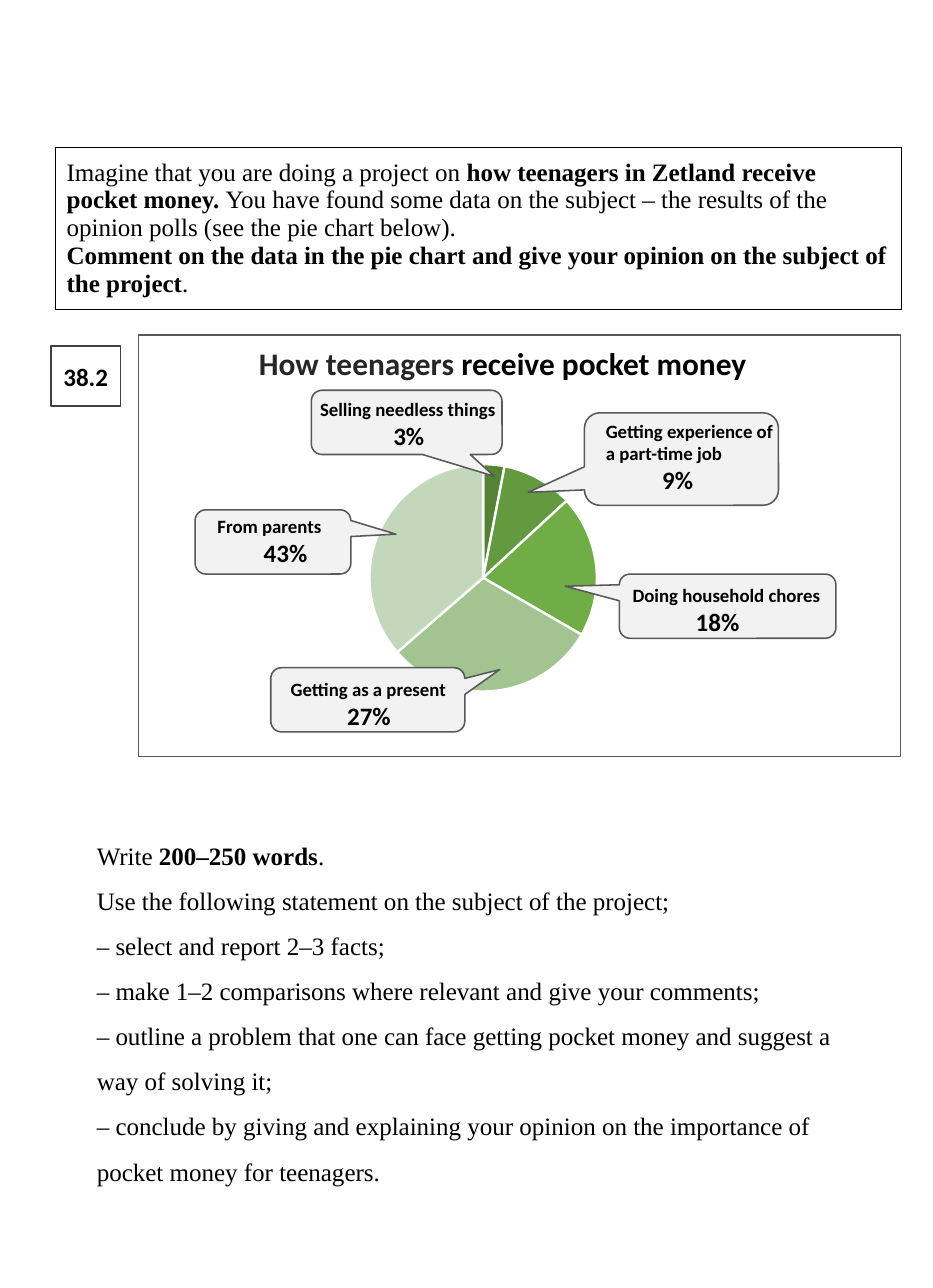
from lxml import etree
from pptx import Presentation
from pptx.chart.data import CategoryChartData
from pptx.dml.color import RGBColor
from pptx.enum.chart import XL_CHART_TYPE
from pptx.enum.shapes import MSO_SHAPE
from pptx.enum.text import MSO_ANCHOR, PP_ALIGN
from pptx.oxml import parse_xml
from pptx.oxml.ns import nsdecls, qn
from pptx.util import Inches, Pt

PIE = XL_CHART_TYPE.PIE
RECT = MSO_SHAPE.RECTANGLE
CALLOUT = MSO_SHAPE.ROUNDED_RECTANGULAR_CALLOUT
TOP, MIDDLE = MSO_ANCHOR.TOP, MSO_ANCHOR.MIDDLE
LEFT, CENTER = PP_ALIGN.LEFT, PP_ALIGN.CENTER
TITLE_ONLY = 5
SERIF, SANS = "Times New Roman", "Calibri"
BLACK, WHITE, GREY, PALE = "000000", "FFFFFF", "595959", "F2F2F2"

TASK = [
    [("Imagine that you are doing a project on ", False),
     ("how teenagers in Zetland receive pocket money. ", True),
     ("You have found some data on the subject – the results of the "
      "opinion polls (see the pie chart below).", False)],
    [("Comment on the data in the pie chart and give your opinion on "
      "the subject of the project", True), (".", False)],
]
PLAN = [
    [("Write ", False), ("200–250 words", True), (".", False)],
    [("Use the following statement on the subject of the project;", False)],
    [("– select and report 2–3 facts;", False)],
    [("– make 1–2 comparisons where relevant and give your comments;", False)],
    [("– outline a problem that one can face getting pocket money and "
      "suggest a way of solving it;", False)],
    [("– conclude by giving and explaining your opinion on the importance "
      "of pocket money for teenagers.", False)],
]
SLICES = [(3, "558336"), (10, "639A3F"), (20, "70AD47"),
          (30, "A1C490"), (36, "C3D8BB")]
CALLOUTS = [
    (["From parents", "43%"], (20.92, 39.58, 16.69, 4.99),
     (0.79, -0.12), (2.06, 0.18), 4.96),
    (["Getting as a present", "27%"], (29.02, 51.84, 20.8, 4.99),
     (0.68, -0.47), (1.81, 0.53), 6.05),
    (["Doing household chores", "18%"], (66.38, 44.57, 23.22, 4.99),
     (-0.75, -0.31), (1.09, 0.53), 6.77),
    (["Getting experience of", "a part-time job", "9%"],
     (62.64, 32.05, 20.8, 7.18), (-0.79, 0.36), (1.81, 0.18), 6.05),
    (["Selling needless things", "3%"], (33.37, 30.3, 20.44, 4.99),
     (0.46, 0.84), (0.6, 0.35), 7.86),
]


def rgb(value):
    return RGBColor.from_string(value)


class Sheet:
    def __init__(self, prs):
        self.col = prs.slide_width / 100
        self.row = prs.slide_height / 100
        self.s = prs.slides.add_slide(prs.slide_layouts[TITLE_ONLY])

    def place(self, x, y, w, h):
        return (round(x * self.col), round(y * self.row),
                round(w * self.col), round(h * self.row))

    def style(self, r, size, font, color=BLACK, bold=True):
        r.font.size, r.font.name, r.font.bold = Pt(size), font, bold
        r.font.color.rgb = rgb(color)

    def fill_text(self, tf, paragraphs, spacing=None):
        for i, parts in enumerate(paragraphs):
            p = tf.add_paragraph() if i else tf.paragraphs[0]
            p.alignment = LEFT
            if spacing:
                p.line_spacing = spacing
            for text, bold in parts:
                r = p.add_run()
                r.text = text
                self.style(r, 16, SERIF, bold=bold)

    def title(self, box, parts):
        sp = self.s.shapes.title
        sp.left, sp.top, sp.width, sp.height = self.place(*box)
        tf = sp.text_frame
        tf.word_wrap, tf.vertical_anchor = True, TOP
        p = tf.paragraphs[0]
        p.alignment = CENTER
        for text, color in parts:
            r = p.add_run()
            r.text = text
            self.style(r, 20, SANS, color)

    def shape(self, kind, box, fill, line, width):
        sp = self.s.shapes.add_shape(kind, *self.place(*box))
        sp.shadow.inherit = False
        if fill:
            sp.fill.solid()
            sp.fill.fore_color.rgb = rgb(fill)
        else:
            sp.fill.background()
        sp.line.color.rgb = rgb(line)
        sp.line.width = Pt(width)
        return sp

    def badge(self, box, text):
        tf = self.shape(RECT, box, WHITE, "404040", 1).text_frame
        tf.text = text
        tf.vertical_anchor = MIDDLE
        tf.paragraphs[0].alignment = CENTER
        self.style(tf.paragraphs[0].runs[0], 16, SANS)

    def callout(self, lines, box, tip, inset, indent):
        sp = self.shape(CALLOUT, box, PALE, GREY, 1)
        sp.adjustments[0], sp.adjustments[1] = tip
        tf = sp.text_frame
        tf.text = "\n".join(lines)
        tf.word_wrap, tf.vertical_anchor = True, TOP
        tf.margin_left = round(inset[0] * self.col)
        tf.margin_top = round(inset[1] * self.row)
        tf.margin_right = tf.margin_bottom = 0
        for p in tf.paragraphs:
            p.alignment = LEFT
            self.style(p.runs[0], 12, SANS)
        share = tf.paragraphs[-1]
        share._p.get_or_add_pPr().set("marL", str(round(indent * self.col)))
        share.runs[0].font.size = Pt(16)

    def pie(self, box, slices, plot):
        data = CategoryChartData()
        data.categories = [str(i + 1) for i in range(len(slices))]
        data.add_series("Series 1", [value for value, color in slices])
        chart = self.s.shapes.add_chart(PIE, *self.place(*box), data).chart
        chart.has_legend = chart.has_title = False
        chart.font.size, chart.font.name = Pt(10), SANS
        chart.font.color.rgb = rgb(BLACK)
        chart.plots[0].vary_by_categories = True
        for i, (value, color) in enumerate(slices):
            point = chart.plots[0].series[0].points[i].format
            point.fill.solid()
            point.fill.fore_color.rgb = rgb(color)
            point.line.color.rgb = rgb(WHITE)
            point.line.width = Pt(1.5)
        area = chart._chartSpace.chart.plotArea
        for old in area.findall(qn("c:layout")):
            area.remove(old)
        layout = parse_xml(f'<c:layout {nsdecls("c")}><c:manualLayout/></c:layout>')
        settings = [("layoutTarget", "inner"), ("xMode", "edge"),
                    ("yMode", "edge"), *zip("xywh", plot)]
        for tag, value in settings:
            etree.SubElement(layout[0], qn(f"c:{tag}")).set("val", str(value))
        area.insert(0, layout)

    def framed_text(self, box, paragraphs):
        table = self.s.shapes.add_table(1, 1, *self.place(*box)).table
        table.first_row = table.horz_banding = False
        cell = table.cell(0, 0)
        cell.vertical_anchor = MIDDLE
        self.fill_text(cell.text_frame, paragraphs)
        tc_pr = cell._tc.get_or_add_tcPr()
        for side in "LRTB":
            ln = etree.SubElement(tc_pr, qn(f"a:ln{side}"), w=str(Pt(0.5)))
            fill = etree.SubElement(ln, qn("a:solidFill"))
            etree.SubElement(fill, qn("a:srgbClr"), val=BLACK)
        cell.fill.background()

    def text(self, box, paragraphs, spacing):
        tf = self.s.shapes.add_textbox(*self.place(*box)).text_frame
        tf.word_wrap = True
        self.fill_text(tf, paragraphs, spacing)


def main():
    prs = Presentation()
    prs.slide_width, prs.slide_height = Inches(8.27), Inches(11.42)
    sheet = Sheet(prs)
    sheet.title((16.81, 26.27, 74.12, 3.85),
                [("How teenagers ", "262626"), ("receive pocket money", BLACK)])
    sheet.framed_text((5.93, 11.47, 90.69, 12.52), TASK)
    sheet.badge((5.44, 26.88, 7.5, 4.64), "38.2")
    sheet.pie((26.48, 29.6, 41.84, 28.02), SLICES, (0.23, 0.23, 0.75, 0.63))
    for callout in CALLOUTS:
        sheet.callout(*callout)
    sheet.shape(RECT, (14.87, 26.01, 81.62, 32.75), None, GREY, 0.75)
    sheet.text((9.19, 63.66, 83.56, 28.72), PLAN, 1.5)
    prs.save("out.pptx")


if __name__ == "__main__":
    main()
